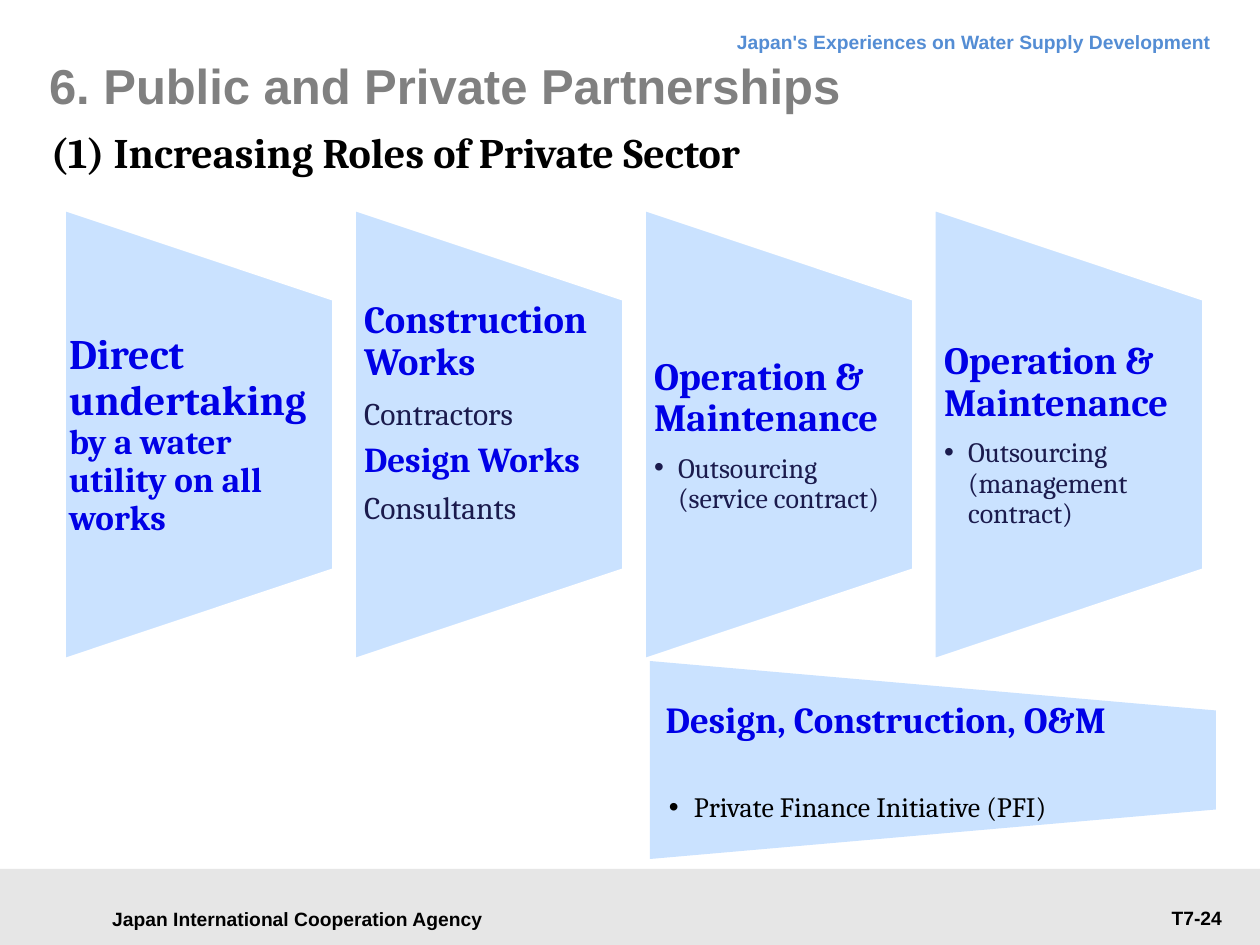
from pptx import Presentation, util as u
from pptx.dml.color import RGBColor
from pptx.enum import shapes, text
from pptx.oxml.ns import qn
from lxml import etree

PX = 914400 // 126
SERIF, SANS = "Cambria", "Arial"
BLUE = RGBColor(0x00, 0x00, 0xE6)
NAVY = RGBColor(0x1B, 0x1B, 0x4D)
PALE = RGBColor(0xCA, 0xE2, 0xFF)
SKY = RGBColor(0x54, 0x8D, 0xD4)
GREY = RGBColor(0x80, 0x80, 0x80)
LIGHT = RGBColor(0xE6, 0xE6, 0xE6)
WHITE = RGBColor(0xFF, 0xFF, 0xFF)
BLACK = RGBColor(0x00, 0x00, 0x00)
LEFT, CENTER, RIGHT = text.PP_ALIGN.LEFT, text.PP_ALIGN.CENTER, text.PP_ALIGN.RIGHT
TOP, MIDDLE = text.MSO_ANCHOR.TOP, text.MSO_ANCHOR.MIDDLE

# Single lines: words, box, font, size, colour, alignment, anchor, insets, exact line height
LINES = [
    ("Japan International Cooperation Agency", (89, 897, 417, 43),
     SANS, 11, BLACK, CENTER, MIDDLE, (13, 6, 13, 6), None),
    ("Japan's Experiences on Water Supply Development", (343, 16, 881, 48),
     SANS, 11, SKY, RIGHT, TOP, (13, 6, 13, 6), 18),
    ("T7-24", (1037, 900, 198, 37),
     SANS, 11, BLACK, RIGHT, TOP, (13, 6, 13, 6), None),
    ("6. Public and Private Partnerships", (49, 35, 1131, 100),
     SANS, 28, GREY, LEFT, MIDDLE, (0, 0, 0, 0), None),
    ("(1) Increasing Roles of Private Sector", (38, 121, 731, 57),
     SERIF, 24, BLACK, LEFT, TOP, (13, 0, 0, 0), 32),
]

# Stages: insets, then paragraphs as (bulleted, runs of (words, size, colour, bold))
MAINTENANCE = (False, [("Operation & Maintenance", 22, BLUE, True)])
STAGES = [
    ((5, 0, 0, 0), [
        (False, [("Direct undertaking\n", 24, BLUE, True),
                 ("by a water utility on all works", 20, BLUE, True)])]),
    ((10, 0, 5, 44), [
        (False, [("Construction Works", 22, BLUE, True)]),
        (False, [("Contractors", 18, NAVY, False)]),
        (False, [("Design Works", 20, BLUE, True)]),
        (False, [("Consultants", 18, NAVY, False)])]),
    ((10, 0, 5, 0), [
        MAINTENANCE,
        (True, [("Outsourcing\n(service contract)", 16, NAVY, False)])]),
    ((10, 0, 5, 0), [
        MAINTENANCE,
        (True, [("Outsourcing (management contract)", 16, NAVY, False)])]),
]
STAGE_LEFT, STAGE_TOP, STAGE_W, STAGE_H, STAGE_STEP = 64, 209, 270, 451, 290
WORDS_TOP, WORDS_H = 300, 271

PFI_BOX = (650, 661, 566, 198)
PFI_HEADING = "Design, Construction, O&M"
PFI_ITEM = "Private Finance Initiative (PFI)"


def px(*values):
    return [value * PX for value in values]


def add_run(para, words, font, size, color, bold):
    for index, piece in enumerate(words.split("\n")):
        if index:
            para.add_line_break()
        if piece:
            span = para.add_run()
            span.text = piece
            span.font.name, span.font.size = font, u.Pt(size)
            span.font.bold, span.font.color.rgb = bold, color


def add_bullet(para, margin, hang):
    props = para._p.get_or_add_pPr()
    props.set("marL", str(margin * PX))
    props.set("indent", str(-hang * PX))
    etree.SubElement(props, qn("a:buFont")).set("typeface", SANS)
    etree.SubElement(props, qn("a:buChar")).set("char", "•")


def set_frame(frame, anchor, insets):
    frame.word_wrap = True
    frame.vertical_anchor = anchor
    (frame.margin_left, frame.margin_top,
     frame.margin_right, frame.margin_bottom) = px(*insets)


def add_box(page, place, anchor, insets):
    frame = page.shapes.add_textbox(*px(*place)).text_frame
    set_frame(frame, anchor, insets)
    return frame


def add_plain(page, kind, place, color, turn=0):
    """Add a filled shape that covers place once turned by 0, 90 or 270 degrees."""
    left, top, width, height = place
    if turn:
        left, top = left + (width - height) / 2, top + (height - width) / 2
        width, height = height, width
    shape = page.shapes.add_shape(kind, *[int(v) for v in px(left, top, width, height)])
    shape.rotation = turn
    shape.shadow.inherit = False
    shape.fill.solid()
    shape.fill.fore_color.rgb = color
    shape.line.fill.background()
    return shape


deck = Presentation()
deck.slide_width, deck.slide_height = px(1260, 945)
page = deck.slides.add_slide(deck.slide_layouts[6])
kinds = shapes.MSO_SHAPE

# Footer band
add_plain(page, kinds.RECTANGLE, (0, 869, 1260, 76), LIGHT)

# Header, titles and footer words
for words, place, font, size, color, align, anchor, insets, height in LINES:
    para = add_box(page, place, anchor, insets).paragraphs[0]
    para.alignment = align
    if height:
        para.line_spacing = u.Pt(height)
    add_run(para, words, font, size, color, True)

# Four stages
for index, (insets, paragraphs) in enumerate(STAGES):
    left = STAGE_LEFT + index * STAGE_STEP
    stage = add_plain(page, kinds.FLOWCHART_MANUAL_OPERATION,
                      (left, STAGE_TOP, STAGE_W, STAGE_H), PALE, 270)
    stage.line.color.rgb, stage.line.width = WHITE, u.Pt(2)
    frame = add_box(page, (left, WORDS_TOP, STAGE_W, WORDS_H), MIDDLE, insets)
    for number, (bulleted, runs) in enumerate(paragraphs):
        para = frame.add_paragraph() if number else frame.paragraphs[0]
        para.line_spacing = 0.9
        para.space_after = u.Pt(round(runs[0][1] * 0.35))
        if bulleted:
            add_bullet(para, 24, 24)
        for words, size, color, bold in runs:
            add_run(para, words, SERIF, size, color, bold)

# Private finance block, its words turned back to level
block = add_plain(page, kinds.TRAPEZOID, PFI_BOX, PALE, 90)
frame = block.text_frame
set_frame(frame, MIDDLE, (6, 13, 6, 13))
frame._txBody.bodyPr.set("vert", "vert270")
heading = frame.paragraphs[0]
heading.alignment = CENTER
heading.space_after = u.Pt(28)
add_run(heading, PFI_HEADING, SERIF, 21, BLUE, True)
item = frame.add_paragraph()
item.alignment = LEFT
add_bullet(item, 31, 25)
add_run(item, PFI_ITEM, SERIF, 16, BLACK, False)

deck.save("out.pptx")
